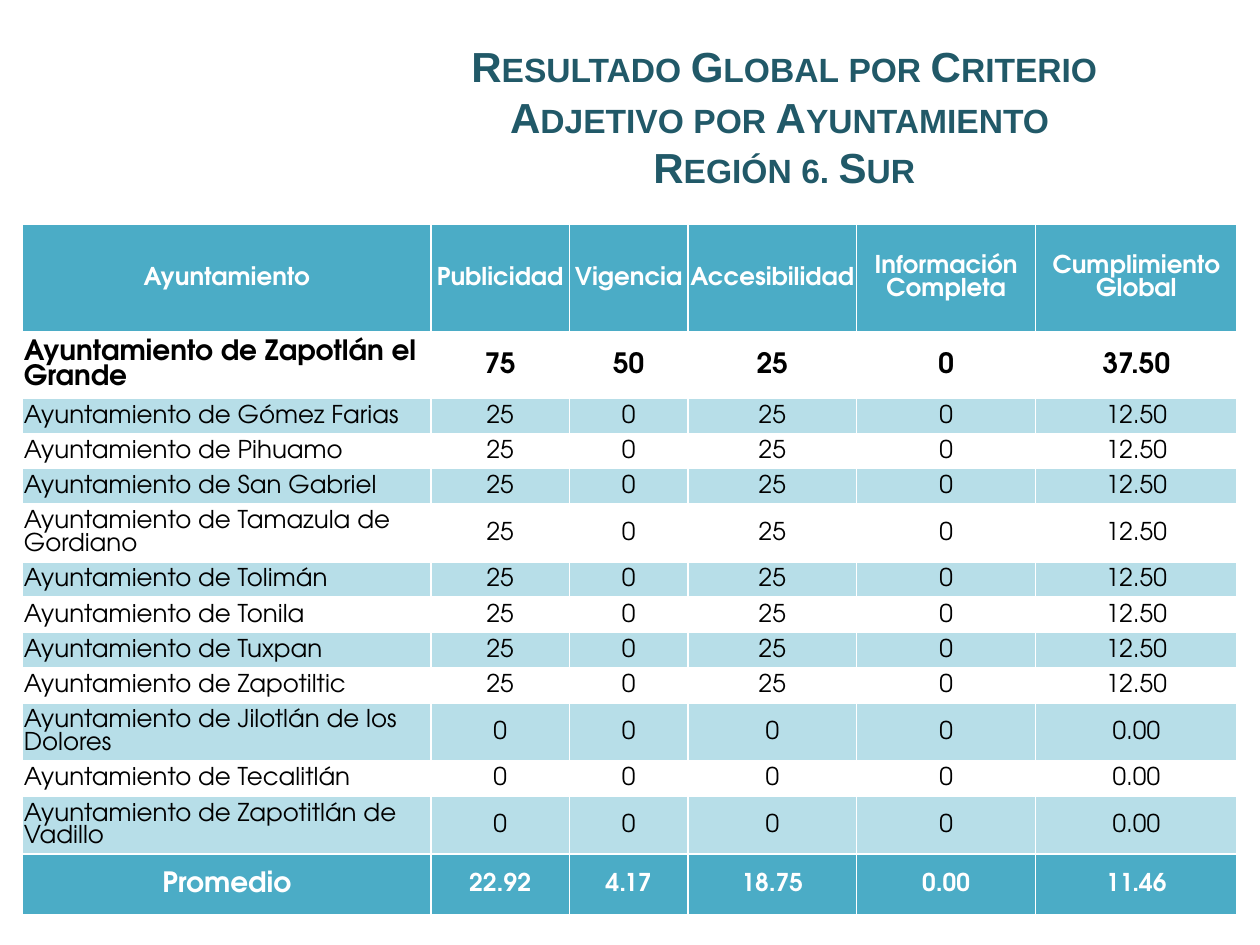
import pptx
import pptx.util
import pptx.dml.color
import pptx.enum.text

Inches = pptx.util.Inches
Pt = pptx.util.Pt
RGBColor = pptx.dml.color.RGBColor
Align = pptx.enum.text.PP_ALIGN
Anchor = pptx.enum.text.MSO_ANCHOR

NAVY = RGBColor(0x21, 0x59, 0x68)
TEAL = RGBColor(0x4B, 0xAC, 0xC6)
PALE = RGBColor(0xB7, 0xDE, 0xE8)
WHITE = RGBColor(0xFF, 0xFF, 0xFF)
BLACK = RGBColor(0, 0, 0)

TITLE = "Resultado Global por Criterio Adjetivo por Ayuntamiento \vRegión 6. Sur"
HEAD = ["Ayuntamiento", "Publicidad", "Vigencia", "Accesibilidad",
        "Información\vCompleta", "Cumplimiento Global"]
HIGH = ["75", "50", "25", "0", "37.50"]
MID = ["25", "0", "25", "0", "12.50"]
LOW = ["0", "0", "0", "0", "0.00"]
TOWNS = [
    ("Zapotlán el Grande", HIGH, 0.53),
    ("Gómez Farias", MID, 0.28),
    ("Pihuamo", MID, 0.28),
    ("San Gabriel", MID, 0.28),
    ("Tamazula de Gordiano", MID, 0.46),
    ("Tolimán", MID, 0.28),
    ("Tonila", MID, 0.28),
    ("Tuxpan", MID, 0.28),
    ("Zapotiltic", MID, 0.28),
    ("Jilotlán de los Dolores", LOW, 0.46),
    ("Tecalitlán", LOW, 0.28),
    ("Zapotitlán de Vadillo", LOW, 0.46),
]
MEAN = ["Promedio", "22.92", "4.17", "18.75", "0.00", "11.46"]
COLS = [3.24, 1.1, 0.94, 1.34, 1.42, 1.6]
ROWS = [0.85] + [tall for _, _, tall in TOWNS] + [0.48]


def write(frame, text, size=14, face="TeX Gyre Adventor", color=BLACK,
          bold=False, align=Align.CENTER, caps=False):
    frame.word_wrap = True
    para = frame.paragraphs[0]
    para.text = text
    para.alignment = align
    for run in para.runs:
        font = run.font
        font.size = Pt(size)
        font.name = face
        font.bold = bold
        font.color.rgb = color
        if caps:
            run._r.get_or_add_rPr().set("cap", "small")


class Page:
    def __init__(self, deck):
        self.slide = deck.slides.add_slide(deck.slide_layouts[5])

    def title(self, text, left, top, width, height):
        shape = self.slide.shapes.title
        shape.left, shape.top = Inches(left), Inches(top)
        shape.width, shape.height = Inches(width), Inches(height)
        shape.text_frame.vertical_anchor = Anchor.MIDDLE
        write(shape.text_frame, text, size=24, face="Arial", color=NAVY,
              bold=True, caps=True)

    def table(self, left, top, cols, rows):
        frame = self.slide.shapes.add_table(
            len(rows), len(cols), Inches(left), Inches(top),
            Inches(sum(cols)), Inches(sum(rows)))
        grid = frame.table
        grid.first_row = grid.horz_banding = False
        for col, width in zip(grid.columns, cols):
            col.width = Inches(width)
        for row, height in zip(grid.rows, rows):
            row.height = Inches(height)
        return grid

    def row(self, grid, index, texts, fill=None, lead=None, **style):
        for col, text in enumerate(texts):
            cell = grid.cell(index, col)
            cell.margin_left = cell.margin_right = Inches(0.01)
            cell.margin_top, cell.margin_bottom = Inches(0.01), 0
            cell.vertical_anchor = Anchor.MIDDLE
            if fill is None:
                cell.fill.background()
            else:
                cell.fill.solid()
                cell.fill.fore_color.rgb = fill
            extra = lead if lead and col == 0 else {}
            write(cell.text_frame, text, **{**style, **extra})


def main():
    deck = pptx.Presentation()
    deck.slide_width, deck.slide_height = Inches(10), Inches(7.5)
    page = Page(deck)
    page.title(TITLE, 2.95, 0.3, 6.55, 1.25)
    grid = page.table(0.18, 1.78, COLS, ROWS)
    page.row(grid, 0, HEAD, fill=TEAL, color=WHITE, bold=True)
    for index, (town, marks, _) in enumerate(TOWNS, 1):
        first = index == 1
        page.row(grid, index, ["Ayuntamiento de " + town] + marks,
                 fill=None if index % 2 else PALE,
                 lead={"align": Align.LEFT},
                 size=16 if first else 14, bold=first)
    page.row(grid, len(ROWS) - 1, MEAN, fill=TEAL, lead={"size": 16},
             color=WHITE, bold=True)
    deck.save("out.pptx")


if __name__ == "__main__":
    main()
